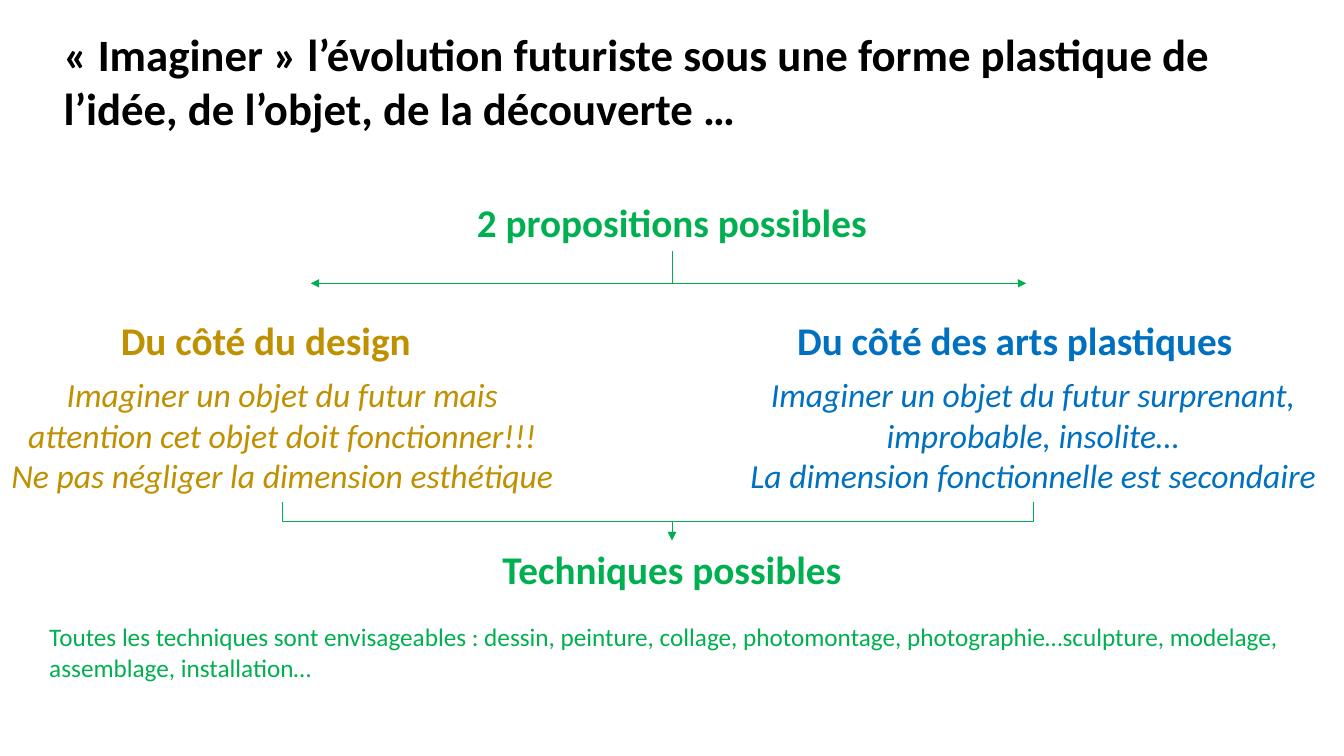
import pptx
import pptx.util
import pptx.dml.color
import pptx.enum.text
import pptx.enum.shapes
import pptx.oxml.ns
import lxml.etree

Pt = pptx.util.Pt
Align = pptx.enum.text.PP_ALIGN
qn = pptx.oxml.ns.qn
hues = {"black": "000000", "green": "00B050", "gold": "BF9000", "blue": "0070C0"}


def write(shape, lines, hue, size, align=Align.LEFT, bold=False, italic=False):
    frame = shape.text_frame
    frame.word_wrap = True
    frame.auto_size = pptx.enum.text.MSO_AUTO_SIZE.SHAPE_TO_FIT_TEXT
    frame.vertical_anchor = pptx.enum.text.MSO_ANCHOR.TOP
    for i, line in enumerate(lines):
        para = frame.add_paragraph() if i else frame.paragraphs[0]
        para.alignment = align
        run = para.add_run()
        run.text = line
        run.font.name = "Calibri"
        run.font.size = Pt(size)
        run.font.bold = bold
        run.font.italic = italic
        run.font.color.rgb = pptx.dml.color.RGBColor.from_string(hues[hue])


def bend(x1, y1, x2, y2, kind):
    """Draw an elbow arrow that leaves its start downwards, as a turned preset."""
    drop, span = y2 - y1, abs(x2 - x1)
    left, top = (x1 + x2 - drop) / 2, (y1 + y2 - span) / 2
    link = slide.shapes.add_connector(
        pptx.enum.shapes.MSO_CONNECTOR.ELBOW,
        Pt(left), Pt(top), Pt(left + drop), Pt(top + span))
    link.line.width = Pt(0.5)
    link.line.color.rgb = pptx.dml.color.RGBColor.from_string(hues["green"])
    props = link._element.spPr
    frame = props.find(qn("a:xfrm"))
    frame.set("rot", str((270 if x2 > x1 else 90) * 60000))
    if x2 > x1:
        frame.set("flipH", "1")
    props.find(qn("a:prstGeom")).set("prst", kind)
    lxml.etree.SubElement(props.find(qn("a:ln")), qn("a:tailEnd"), type="triangle")
    lxml.etree.SubElement(props, qn("a:effectLst"))


deck = pptx.Presentation()
deck.slide_width, deck.slide_height = Pt(960), Pt(540)
slide = deck.slides.add_slide(deck.slide_layouts[5])

title = slide.shapes.title
title.left, title.top, title.width, title.height = Pt(38.2), Pt(15.8), Pt(897.8), Pt(85)
write(title, ["« Imaginer » l’évolution futuriste sous une forme plastique de "
              "l’idée, de l’objet, de la découverte …"], "black", 32, bold=True)

heads = [
    (320.4, 138.2, 319, "2 propositions possibles", "green", Align.CENTER),
    (79.2, 222.5, 262, "Du côté du design", "gold", Align.LEFT),
    (562.3, 222.5, 373.7, "Du côté des arts plastiques", "blue", Align.LEFT),
    (320.4, 385.9, 319, "Techniques possibles", "green", Align.CENTER),
]
for x, y, wide, text, hue, align in heads:
    box = slide.shapes.add_textbox(Pt(x), Pt(y), Pt(wide), Pt(41.2))
    write(box, [text], hue, 28, align, bold=True)

ideas = [
    (0, 403.2, "gold",
     ["Imaginer un objet du futur mais attention cet objet doit fonctionner!!!",
      "Ne pas négliger la dimension esthétique"]),
    (519.8, 436.3, "blue",
     ["Imaginer un objet du futur surprenant, improbable, insolite…",
      "La dimension fonctionnelle est secondaire"]),
]
for x, wide, hue, lines in ideas:
    box = slide.shapes.add_textbox(Pt(x), Pt(263.7), Pt(wide), Pt(94.5))
    write(box, lines, hue, 24, Align.CENTER, italic=True)

mid = 480
for end in (222, 733):
    bend(mid, 179.4, end, 202.4, "bentConnector2")
for start in (201.6, 738):
    bend(start, 358.4, mid, 385.9, "bentConnector3")

box = slide.shapes.add_textbox(Pt(28.1), Pt(440.6), Pt(907.9), Pt(51))
write(box, ["Toutes les techniques sont envisageables : dessin, peinture, collage, "
            "photomontage, photographie…sculpture, modelage, assemblage, "
            "installation…"], "green", 18)

deck.save("out.pptx")
